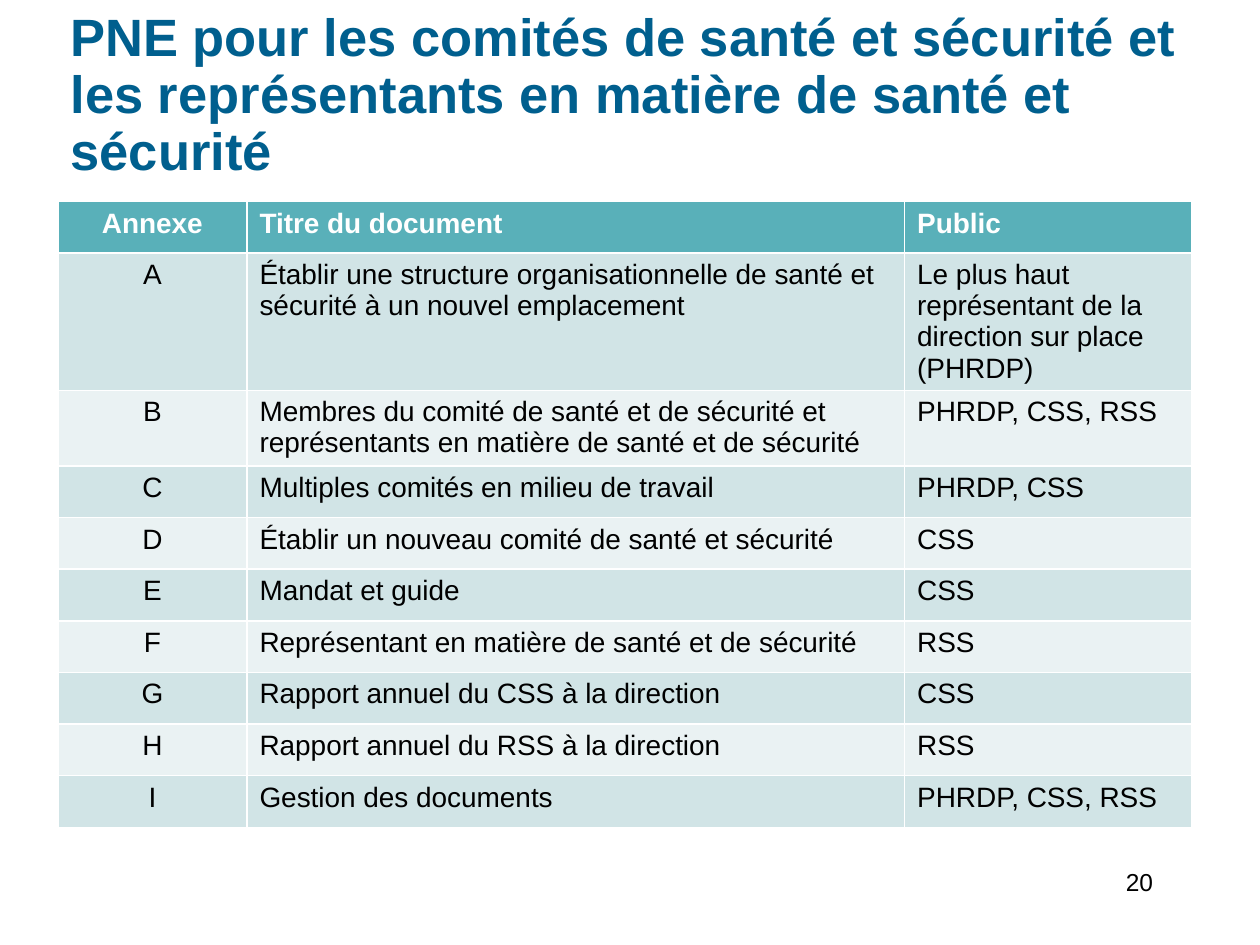
from pptx import Presentation
from pptx.dml.color import RGBColor
from pptx.enum import text
from pptx.util import Inches, Pt

FONT = "Arial"
HEADER = ("Annexe", "Titre du document", "Public")
DOCUMENTS = [
    ("A", "Établir une structure organisationnelle de santé et sécurité à un nouvel emplacement",
     "Le plus haut représentant de la direction sur place (PHRDP)"),
    ("B", "Membres du comité de santé et de sécurité et représentants en matière de santé et de sécurité",
     "PHRDP, CSS, RSS"),
    ("C", "Multiples comités en milieu de travail", "PHRDP, CSS"),
    ("D", "Établir un nouveau comité de santé et sécurité", "CSS"),
    ("E", "Mandat et guide", "CSS"),
    ("F", "Représentant en matière de santé et de sécurité", "RSS"),
    ("G", "Rapport annuel du CSS à la direction", "CSS"),
    ("H", "Rapport annuel du RSS à la direction", "RSS"),
    ("I", "Gestion des documents", "PHRDP, CSS, RSS"),
]
COLUMN_WIDTHS = (1.5, 5.22, 2.28)
ROW_HEIGHT = 0.41
TALL_ROWS = {1: 1.08, 2: 0.6}  # rows whose text wraps


def rgb(value):
    return RGBColor.from_string(value)


def write(tf, content, size, color, bold=False, align=text.PP_ALIGN.LEFT):
    tf.text = content
    p = tf.paragraphs[0]
    p.alignment = align
    font = p.runs[0].font
    font.name, font.size, font.bold = FONT, Pt(size), bold
    font.color.rgb = rgb(color)
    return p


def add_title(s, left, top, width, height):
    sp = s.shapes.title
    sp.left, sp.top, sp.width, sp.height = map(Inches, (left, top, width, height))
    tf = sp.text_frame
    p = write(tf, "PNE pour les comités de santé et sécurité et "
              "les représentants en matière de santé et sécurité", 30, "005F8E", True)
    p.line_spacing = 0.9
    p.space_before = Pt(0)
    tf.word_wrap = True
    tf.auto_size = text.MSO_AUTO_SIZE.NONE
    tf.vertical_anchor = text.MSO_ANCHOR.MIDDLE


def add_document_table(s, left, top, width):
    rows = [HEADER] + DOCUMENTS
    heights = [TALL_ROWS.get(i, ROW_HEIGHT) for i in range(len(rows))]
    table = s.shapes.add_table(len(rows), len(HEADER), Inches(left), Inches(top),
                               Inches(width), Inches(sum(heights))).table
    for column, column_width in zip(table.columns, COLUMN_WIDTHS):
        column.width = Inches(column_width)
    for i, (values, height) in enumerate(zip(rows, heights)):
        table.rows[i].height = Inches(height)
        is_header = i == 0
        # Body rows alternate between two tints
        fill = "59B0B9" if is_header else ("EAF2F3", "D1E4E6")[i % 2]
        for j, value in enumerate(values):
            cell = table.cell(i, j)
            cell.fill.solid()
            cell.fill.fore_color.rgb = rgb(fill)
            align = text.PP_ALIGN.CENTER if j == 0 else text.PP_ALIGN.LEFT
            write(cell.text_frame, value, 16, "FFFFFF" if is_header else "000000",
                  is_header, align)


def add_page_number(s, left, top, width, height):
    tf = s.shapes.add_textbox(*map(Inches, (left, top, width, height))).text_frame
    tf.word_wrap = True
    write(tf, "20", 14, "000000", align=text.PP_ALIGN.RIGHT)


def main():
    prs = Presentation()
    prs.slide_width, prs.slide_height = Inches(10), Inches(7.5)
    s = prs.slides.add_slide(prs.slide_layouts.get_by_name("Title Only"))
    add_title(s, 0.46, 0.14, 9, 1.25)
    add_document_table(s, 0.46, 1.6, 9)
    add_page_number(s, 7.17, 6.83, 2.08, 0.5)
    prs.save("out.pptx")


if __name__ == "__main__":
    main()
